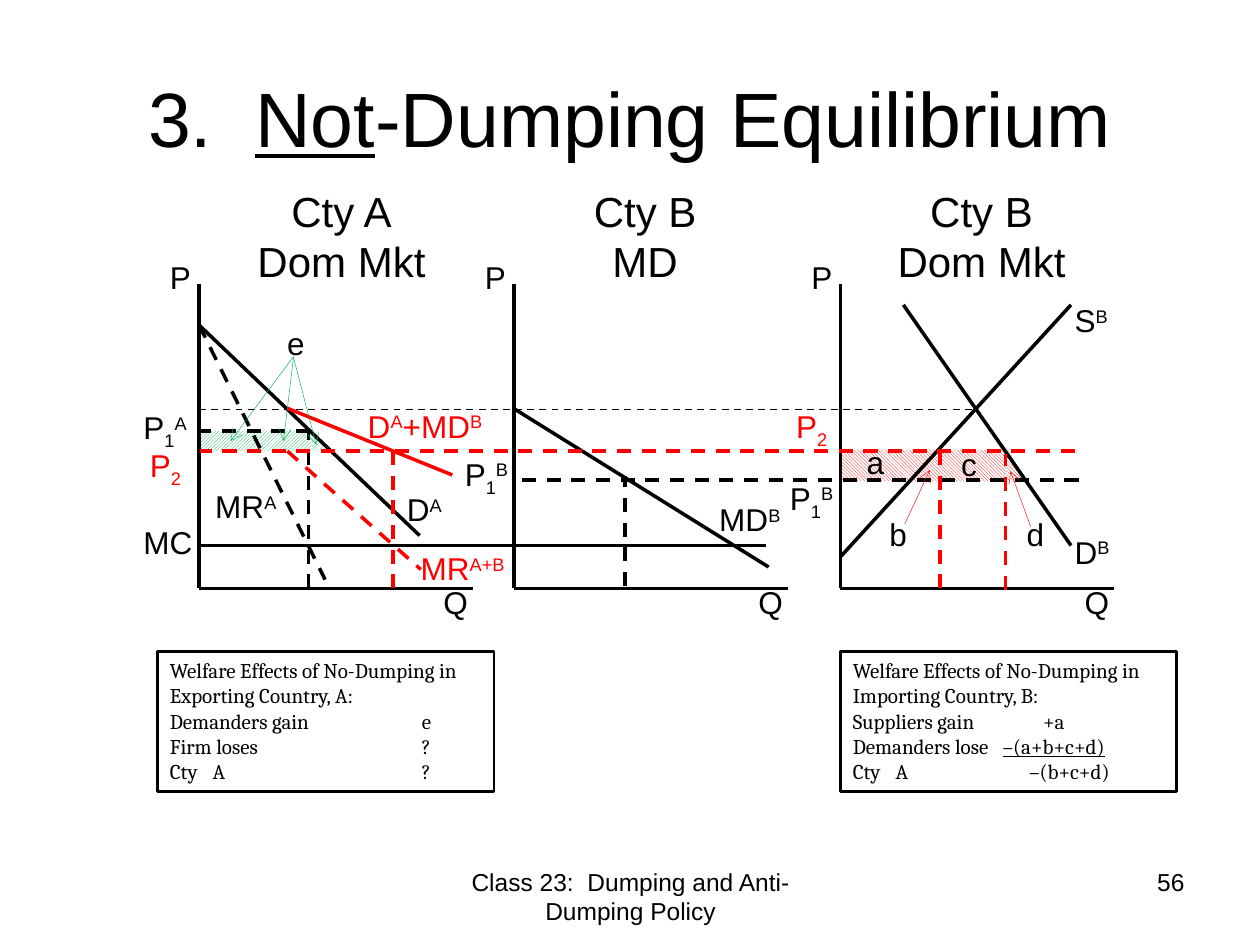
import pptx
import pptx.util
import pptx.dml.color
import pptx.enum.dml
import pptx.enum.shapes
import pptx.enum.text
import pptx.oxml.ns
import lxml.etree

Inches = pptx.util.Inches
Pt = pptx.util.Pt
RGBColor = pptx.dml.color.RGBColor
Align = pptx.enum.text.PP_ALIGN
Anchor = pptx.enum.text.MSO_ANCHOR
Fit = pptx.enum.text.MSO_AUTO_SIZE
Shape = pptx.enum.shapes.MSO_SHAPE
Pattern = pptx.enum.dml.MSO_PATTERN
qn = pptx.oxml.ns.qn

BLACK = RGBColor(0x00, 0x00, 0x00)
WHITE = RGBColor(0xFF, 0xFF, 0xFF)
RED = RGBColor(0xFF, 0x00, 0x00)
GREEN = RGBColor(0x00, 0xB0, 0x50)
PALE = RGBColor(0xE0, 0xF1, 0xF2)

MARKS = {
    "|": {},
    "_": {"baseline": "-25000"},
    "^": {"baseline": "30000"},
    "~": {"u": "sng"},
}


def split_marks(text):
    pieces = [["|", ""]]
    for letter in text:
        if letter in MARKS:
            pieces.append([letter, ""])
        else:
            pieces[-1][1] += letter
    return [(mark, words) for mark, words in pieces if words]


def apply(target, values):
    for name, value in values.items():
        setattr(target, name, value)


class MarketDiagram:
    font = "Arial"
    box_font = "Cambria"
    label_size = 18
    line_width = 2

    def __init__(self, slide):
        self.slide = slide

    def fill_lines(self, frame, lines, size, color, align, font, stops=()):
        for index, text in enumerate(lines):
            paragraph = frame.paragraphs[0] if index == 0 else frame.add_paragraph()
            paragraph.alignment = align
            if index < len(stops) and stops[index]:
                tabs = lxml.etree.SubElement(paragraph._p.get_or_add_pPr(), qn("a:tabLst"))
                for stop in stops[index]:
                    lxml.etree.SubElement(tabs, qn("a:tab"), pos=str(Inches(stop)), algn="l")
            for mark, words in split_marks(text):
                run = paragraph.add_run()
                run.text = words
                apply(run.font, {"name": font, "size": Pt(size)})
                run.font.color.rgb = color
                for name, value in MARKS[mark].items():
                    run._r.get_or_add_rPr().set(name, value)

    def text(self, left, top, width, height, lines, size=label_size, color=BLACK,
             align=Align.LEFT, anchor=Anchor.TOP, fit=Fit.SHAPE_TO_FIT_TEXT):
        frame = self.slide.shapes.add_textbox(
            Inches(left), Inches(top), Inches(width), Inches(height)).text_frame
        apply(frame, {"word_wrap": True, "auto_size": fit, "vertical_anchor": anchor})
        self.fill_lines(frame, lines, size, color, align, self.font)

    def label(self, left, top, words, color=BLACK, width=0.75):
        self.text(left, top, width, 0.4, [words], color=color)

    def line(self, start, end, color=BLACK, width=line_width, dashed=False, arrow=False):
        connector = self.slide.shapes.add_connector(
            pptx.enum.shapes.MSO_CONNECTOR.STRAIGHT,
            *(Inches(value) for value in (*start, *end)))
        connector.line.color.rgb = color
        connector.line.width = Pt(width)
        if dashed:
            connector.line.dash_style = pptx.enum.dml.MSO_LINE.DASH
        properties = connector._element.spPr
        if arrow:
            lxml.etree.SubElement(properties.find(qn("a:ln")), qn("a:tailEnd"), type="arrow")
        lxml.etree.SubElement(properties, qn("a:effectLst"))

    def preset(self, kind, left, top, width, height):
        shape = self.slide.shapes.add_shape(
            kind, Inches(left), Inches(top), Inches(width), Inches(height))
        shape.shadow.inherit = False
        return shape

    def hatch(self, kind, place, pattern, color):
        area = self.preset(kind, *place)
        area.fill.patterned()
        area.fill.pattern = pattern
        area.fill.fore_color.rgb = color
        area.fill.back_color.rgb = WHITE
        if kind == Shape.RECTANGLE:
            area.line.fill.background()
        else:
            area.line.color.rgb = PALE
            area.line.width = Pt(0.75)

    def welfare_box(self, left, lines, stops):
        box = self.preset(Shape.RECTANGLE, left, 5.17, 2.67, 1.11)
        box.fill.background()
        box.line.color.rgb = BLACK
        box.line.width = Pt(1.5)
        apply(box.text_frame, {"word_wrap": True, "vertical_anchor": Anchor.TOP,
                               "auto_size": Fit.SHAPE_TO_FIT_TEXT})
        self.fill_lines(box.text_frame, lines, 12, BLACK, Align.LEFT, self.box_font, stops)


def main():
    deck = pptx.Presentation()
    apply(deck, {"slide_width": Inches(10), "slide_height": Inches(7.5)})
    diagram = MarketDiagram(deck.slides.add_slide(deck.slide_layouts[6]))

    for kind, place, pattern, color in (
        (Shape.RECTANGLE, (1.58, 3.42, 0.89, 0.16), Pattern.DARK_UPWARD_DIAGONAL, GREEN),
        (Shape.RIGHT_TRIANGLE, (2.47, 3.41, 0.13, 0.16), Pattern.DARK_UPWARD_DIAGONAL, GREEN),
        (Shape.RECTANGLE, (6.67, 3.57, 1.33, 0.25), Pattern.DARK_DOWNWARD_DIAGONAL, RED),
        (Shape.RIGHT_TRIANGLE, (7.99, 3.55, 0.14, 0.27), Pattern.DARK_DOWNWARD_DIAGONAL, RED),
    ):
        diagram.hatch(kind, place, pattern, color)

    diagram.text(0.5, 0.3, 9, 1.25, ["3.  ~Not|-Dumping Equilibrium"], 44,
                 align=Align.CENTER, anchor=Anchor.MIDDLE, fit=Fit.NONE)

    for origin, heading_left, heading in (
        (1.58, 1.92, ["Cty A", "Dom Mkt"]),
        (4.08, 4.33, ["Cty B", "MD"]),
        (6.67, 7, ["Cty B", "Dom Mkt"]),
    ):
        diagram.line((origin, 4.67), (origin + 2.17, 4.67))
        diagram.line((origin, 4.67), (origin, 2.25))
        diagram.label(origin - 0.33, 2, "P")
        diagram.label(origin + 1.84, 4.58, "Q")
        diagram.text(heading_left, 1.42, 1.58, 0.91, heading, 24, align=Align.CENTER)

    for start, end in (
        ((1.58, 2.58), (3.33, 4.25)), ((7.17, 2.42), (8.5, 4.33)),
        ((6.67, 4.42), (8.5, 2.42)), ((4.09, 3.25), (6.1, 4.5)),
        ((1.58, 4.33), (6.08, 4.33)),
    ):
        diagram.line(start, end)
    diagram.line((1.58, 3.25), (7.75, 3.25), width=1, dashed=True)
    diagram.line((2.28, 3.24), (3.59, 3.77), RED)
    for color, start, end in (
        (BLACK, (1.58, 2.58), (2.58, 4.6)), (BLACK, (2.45, 4.67), (2.45, 3.42)),
        (BLACK, (2.46, 3.42), (1.58, 3.42)), (BLACK, (4.96, 4.65), (4.96, 3.78)),
        (BLACK, (8.56, 3.81), (4.08, 3.81)), (RED, (3.12, 4.67), (3.12, 3.58)),
        (RED, (8.53, 3.58), (1.59, 3.58)), (RED, (2.28, 3.58), (3.34, 4.52)),
        (RED, (7.46, 4.67), (7.46, 3.58)), (RED, (7.98, 4.68), (7.98, 3.6)),
    ):
        diagram.line(start, end, color, dashed=True)

    for left, top, words in (
        (1.04, 3.19, "P_1^A"), (1.04, 4.1, "MC"), (1.61, 3.82, "MR^A"),
        (3.59, 3.56, "P_1^B"), (8.43, 2.34, "S^B"), (5.61, 3.92, "MD^B"),
        (8.43, 4.18, "D^B"), (6.17, 3.75, "P_1^B"), (3.13, 3.84, "D^A"),
    ):
        diagram.label(left, top, words)
    for left, top, words, width in (
        (2.82, 3.18, "D^A|+MD^B", 1.35), (3.24, 4.31, "MR^A+B", 1.17),
        (1.09, 3.49, "P_2", 0.75), (6.22, 3.18, "P_2", 0.75),
    ):
        diagram.label(left, top, words, RED, width)
    for left, top, area in (
        (6.78, 3.47, "a"), (7.53, 3.48, "c"), (8.05, 4.04, "d"),
        (6.96, 4.04, "b"), (2.18, 2.52, "e"),
    ):
        diagram.label(left, top, area, width=0.33)

    for color, start, end in (
        (RED, (7.18, 4.16), (7.38, 3.73)), (RED, (8.18, 4.18), (8.02, 3.74)),
        (GREEN, (2.33, 2.83), (1.83, 3.5)), (GREEN, (2.33, 2.83), (2.25, 3.5)),
        (GREEN, (2.33, 2.84), (2.51, 3.53)),
    ):
        diagram.line(start, end, color, 0.25, arrow=True)

    diagram.welfare_box(
        6.67,
        ["Welfare Effects of No-Dumping in Importing Country, B:", "Suppliers gain\t+a",
         "Demanders lose\t~–(a+b+c+d)", "Cty\tA\t–(b+c+d)"],
        [(), (1.51,), (1.19,), (0.34, 1.4)])
    diagram.welfare_box(
        1.25,
        ["Welfare Effects of No-Dumping in Exporting Country, A:", "Demanders gain\te",
         "Firm loses\t?", "Cty\tA\t?"],
        [(), (2,), (2,), (0.34, 2)])

    diagram.text(3.42, 6.83, 3.17, 0.52, ["Class 23:  Dumping and Anti-Dumping Policy"], 14,
                 align=Align.CENTER, fit=Fit.NONE)
    diagram.text(7.17, 6.83, 2.33, 0.52, ["56"], 14, align=Align.RIGHT, fit=Fit.NONE)
    deck.save("out.pptx")


if __name__ == "__main__":
    main()
